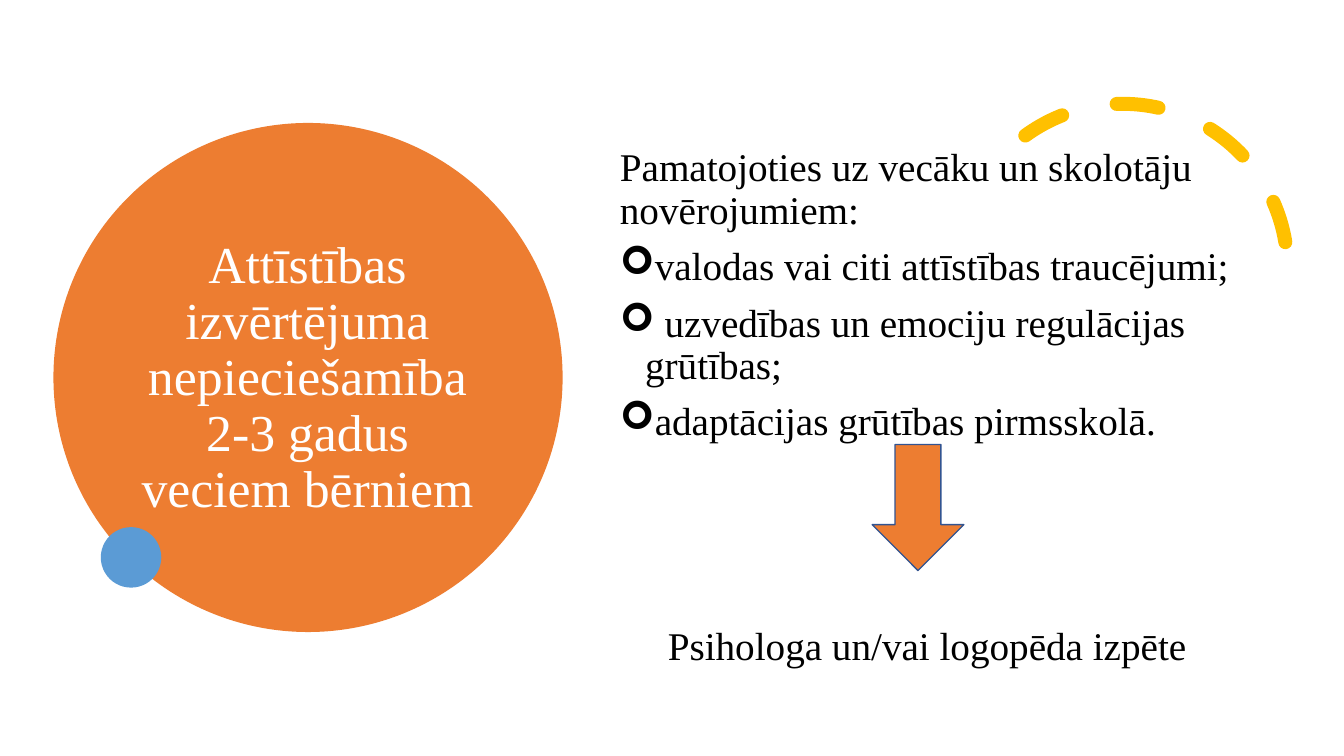
from dataclasses import dataclass

from lxml import etree
from pptx import Presentation
from pptx.dml.color import RGBColor
from pptx.enum.dml import MSO_LINE
from pptx.enum.shapes import MSO_SHAPE
from pptx.enum.text import MSO_ANCHOR, PP_ALIGN
from pptx.oxml.ns import qn
from pptx.util import Inches, Pt

OVAL, ARC, DOWN_ARROW = MSO_SHAPE.OVAL, MSO_SHAPE.ARC, MSO_SHAPE.DOWN_ARROW
DASH = MSO_LINE.DASH
TOP, MIDDLE = MSO_ANCHOR.TOP, MSO_ANCHOR.MIDDLE
LEFT, CENTER = PP_ALIGN.LEFT, PP_ALIGN.CENTER


@dataclass(frozen=True)
class Theme:
    font: str = "Times New Roman"
    title_size: float = 37
    body_size: float = 28
    line_spacing: float = 0.9
    space_before: float = 10
    bullet: str = "➢"
    bullet_indent: float = 0.25
    white: str = "FFFFFF"
    black: str = "000000"
    orange: str = "ED7D31"
    blue: str = "5B9BD5"
    yellow: str = "FFC000"
    outline: str = "325491"


class SlideBuilder:
    """Draws styled elements on one slide."""

    def __init__(self, slide, theme):
        self.s = slide
        self.theme = theme

    def shape(self, kind, box, fill=None, line=None, width=1):
        sp = self.s.shapes.add_shape(kind, *map(Inches, box))
        sp.shadow.inherit = False
        if fill:
            sp.fill.solid()
            sp.fill.fore_color.rgb = RGBColor.from_string(fill)
        else:
            sp.fill.background()
        if line:
            sp.line.color.rgb = RGBColor.from_string(line)
            sp.line.width = Pt(width)
        else:
            sp.line.fill.background()
        return sp

    def dashed_arc(self, box, rotation, start, end, color, width):
        sp = self.shape(ARC, box, line=color, width=width)
        sp.rotation = rotation
        sp.adjustments[0], sp.adjustments[1] = start, end
        sp.line.dash_style = DASH
        sp.line._get_or_add_ln().set("cap", "rnd")

    def text(self, box, paragraphs, size, color, align=LEFT, anchor=TOP):
        tf = self.s.shapes.add_textbox(*map(Inches, box)).text_frame
        tf.word_wrap = True
        tf.vertical_anchor = anchor
        for i, (content, bulleted) in enumerate(paragraphs):
            p = tf.add_paragraph() if i else tf.paragraphs[0]
            p.alignment = align
            p.line_spacing = self.theme.line_spacing
            p.space_before = Pt(self.theme.space_before if i else 0)
            if bulleted:
                self.bullet(p)
            r = p.add_run()
            r.text = content
            r.font.name = self.theme.font
            r.font.size = Pt(size)
            r.font.color.rgb = RGBColor.from_string(color)

    def bullet(self, p):
        pPr = p._p.get_or_add_pPr()
        indent = Inches(self.theme.bullet_indent)
        pPr.set("marL", str(indent))
        pPr.set("indent", str(-indent))
        etree.SubElement(pPr, qn("a:buFont"), typeface="Wingdings")
        etree.SubElement(pPr, qn("a:buChar"), char=self.theme.bullet)


def main():
    prs = Presentation()
    prs.slide_width, prs.slide_height = Inches(13.33), Inches(7.5)
    theme = Theme()
    s = SlideBuilder(prs.slides.add_slide(prs.slide_layouts[6]), theme)

    s.shape(OVAL, (0.53, 1.22, 5.05, 5.05), theme.orange)
    title = "Attīstības izvērtējuma nepieciešamība 2-3 gadus veciem bērniem"
    s.text((1.28, 1.53, 3.54, 4.45), [(title, False)],
           theme.title_size, theme.white, CENTER, MIDDLE)
    s.dashed_arc((9.5, 1.03, 3.27, 3.27), 330.2, 158.174, 17.814,
                 theme.yellow, 10)
    s.shape(OVAL, (1, 5.23, 0.6, 0.6), theme.blue)

    reasons = [
        ("Pamatojoties uz vecāku un skolotāju novērojumiem:", False),
        ("valodas vai citi attīstības traucējumi;", True),
        (" uzvedības un emociju regulācijas grūtības;", True),
        ("adaptācijas grūtības pirmsskolā.", True),
    ]
    s.text((6.05, 1.42, 6.29, 3.1), reasons, theme.body_size, theme.black)
    s.text((6.05, 6.17, 6.29, 0.55),
           [("Psihologa un/vai logopēda izpēte", False)],
           theme.body_size, theme.black, CENTER)
    s.shape(DOWN_ARROW, (8.65, 4.41, 0.91, 1.25), theme.orange, theme.outline)

    prs.save("out.pptx")


if __name__ == "__main__":
    main()
